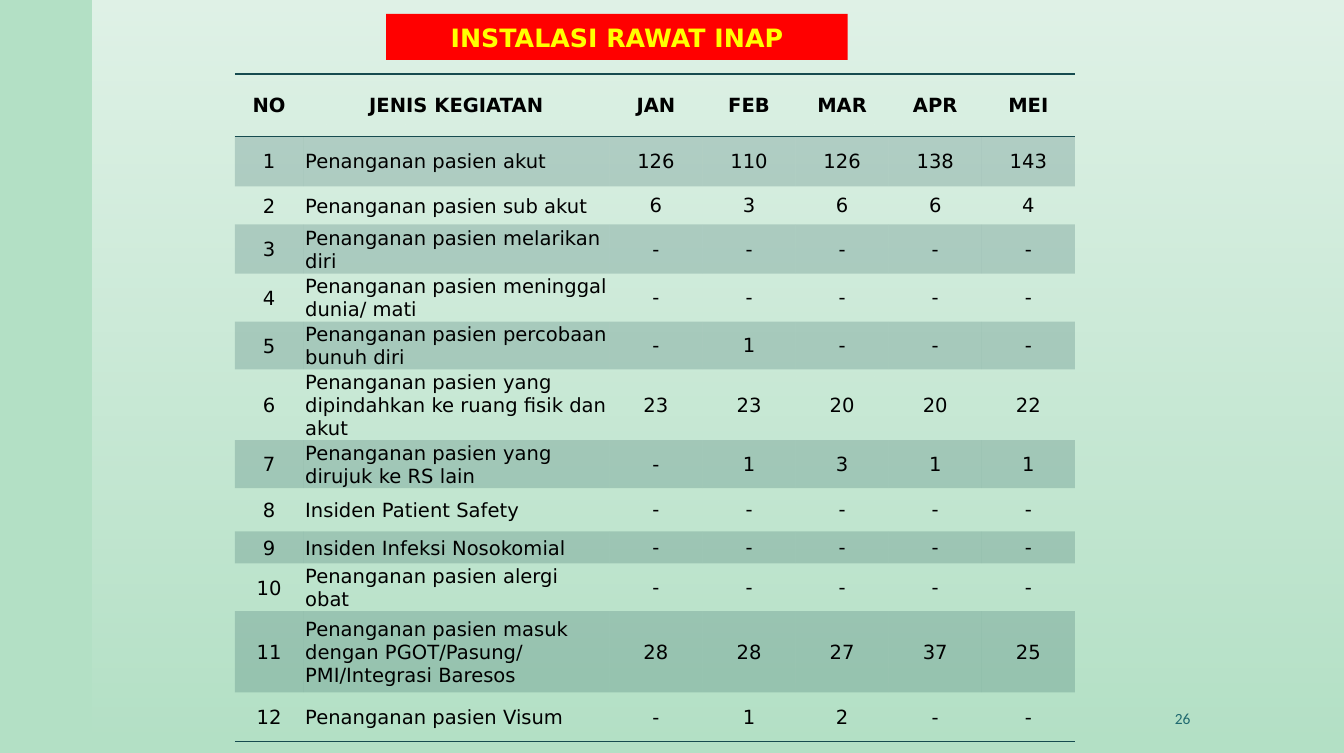
from lxml import etree
from pptx import Presentation
from pptx import util as u
from pptx.dml import color
from pptx.enum import shapes, text
from pptx.oxml import ns

INK, TEAL, MINT, WHITE = "000000", "164B4F", "B3E0C5", "FFFFFF"
NO_STYLE = "{2D5ABB26-0587-4C30-8999-92F81FD0307C}"
CENTER, LEFT, RIGHT = text.PP_ALIGN.CENTER, text.PP_ALIGN.LEFT, text.PP_ALIGN.RIGHT

HEADINGS = ["NO", "JENIS KEGIATAN", "JAN", "FEB", "MAR", "APR", "MEI"]
ACTIVITIES = [
    ("Penanganan pasien akut", "126 110 126 138 143", 36),
    ("Penanganan pasien sub akut", "6 3 6 6 4", 27.4),
    ("Penanganan pasien melarikan diri", "- - - - -", 35.3),
    ("Penanganan pasien meninggal dunia/ mati", "- - - - -", 27.4),
    ("Penanganan pasien percobaan bunuh diri", "- 1 - - -", 26.6),
    ("Penanganan pasien yang dipindahkan ke ruang fisik dan akut", "23 23 20 20 22", 39.6),
    ("Penanganan pasien yang dirujuk ke RS lain", "- 1 3 1 1", 26.6),
    ("Insiden Patient Safety", "- - - - -", 31),
    ("Insiden Infeksi Nosokomial", "- - - - -", 23),
    ("Penanganan pasien alergi obat", "- - - - -", 26.6),
    ("Penanganan pasien masuk dengan PGOT/Pasung/\vPMI/Integrasi Baresos", "28 28 27 37 25", 58.3),
    ("Penanganan pasien Visum", "- 1 2 - -", 35.3),
]


def rgb(code):
    return color.RGBColor.from_string(code)


def add_xml(parent, tag, **attributes):
    return etree.SubElement(parent, ns.qn(tag), attributes)


class WardSlide:
    """Builds the monthly ward report in one shared style."""

    def __init__(self, deck, font="DejaVu Sans", size=14):
        self.font, self.size = font, size
        self.slide = deck.slides.add_slide(deck.slide_layouts[5])
        backdrop = self.slide.background.fill
        backdrop.solid()
        backdrop.fore_color.rgb = rgb(MINT)

    def place(self, item, box):
        item.left, item.top, item.width, item.height = map(u.Pt, box)

    def fill_text(self, frame, words, align=CENTER, ink=INK, bold=False, size=None, font=None):
        frame.text = words
        frame.word_wrap = True
        for paragraph in frame.paragraphs:
            paragraph.alignment = align
            style = paragraph.font
            style.name, style.size = font or self.font, u.Pt(size or self.size)
            style.bold, style.color.rgb = bold, rgb(ink)

    def veil(self, box, opacities):
        sheen = self.slide.shapes.add_shape(shapes.MSO_SHAPE.RECTANGLE, *map(u.Pt, box))
        sheen.shadow.inherit = False
        sheen.line.fill.background()
        sheen.fill.gradient()
        sheen.fill.gradient_angle = 270
        for position, stop in enumerate(sheen.fill.gradient_stops):
            stop.position, stop.color.rgb = position, rgb(WHITE)
        tints = sheen._element.spPr.iter(ns.qn("a:srgbClr"))
        for tint, opacity in zip(tints, opacities):
            add_xml(tint, "a:alpha", val=str(opacity * 1000))
        self.slide.shapes._spTree.insert(2, sheen._element)

    def title(self, words, box, fill, ink):
        banner = self.slide.shapes.title
        self.place(banner, box)
        outline = add_xml(banner._element.spPr, "a:prstGeom", prst="roundRect")
        add_xml(outline, "a:avLst")
        banner.fill.solid()
        banner.fill.fore_color.rgb = rgb(fill)
        self.fill_text(banner.text_frame, words, ink=ink, bold=True, size=18.1)
        banner.text_frame.auto_size = text.MSO_AUTO_SIZE.NONE
        banner.text_frame.vertical_anchor = text.MSO_ANCHOR.MIDDLE

    def label(self, words, box, **style):
        frame = self.slide.shapes.add_textbox(*map(u.Pt, box)).text_frame
        self.fill_text(frame, words, **style)
        frame.vertical_anchor = text.MSO_ANCHOR.MIDDLE

    def rule(self, cell, side):
        edge = add_xml(cell._tc.get_or_add_tcPr(), side, w=str(u.Pt(1)))
        add_xml(add_xml(edge, "a:solidFill"), "a:srgbClr", val=TEAL)

    def cell(self, cell, words, row, column, last):
        header = row == 0
        align = LEFT if column == 1 and not header else CENTER
        self.fill_text(cell.text_frame, words, align, bold=header)
        cell.vertical_anchor = text.MSO_ANCHOR.MIDDLE
        inset = u.Pt(1.44 if header or column < 2 else 0.72)
        cell.margin_left = cell.margin_top = cell.margin_right = inset
        cell.margin_bottom = 0
        if header:
            self.rule(cell, "a:lnT")
        if header or row == last:
            self.rule(cell, "a:lnB")
        if row % 2:
            cell.fill.solid()
            cell.fill.fore_color.rgb = rgb(TEAL)
            tint = cell._tc.tcPr.find(ns.qn("a:solidFill"))[0]
            add_xml(tint, "a:alpha", val="20000")
        else:
            cell.fill.background()

    def table(self, rows, box, widths, heights):
        holder = self.slide.shapes.add_table(len(rows), len(widths), *map(u.Pt, box))
        grid = holder.table
        grid.horz_banding = False
        grid._tbl.tblPr.find(ns.qn("a:tableStyleId")).text = NO_STYLE
        for column, width in zip(grid.columns, widths):
            column.width = u.Pt(width)
        for row, height in zip(grid.rows, heights):
            row.height = u.Pt(height)
        for r, row in enumerate(rows):
            for c, words in enumerate(row):
                self.cell(grid.cell(r, c), words, r, c, len(rows) - 1)
        self.place(holder, box)


def main():
    deck = Presentation()
    deck.slide_width, deck.slide_height = u.Pt(964), u.Pt(540)
    ward = WardSlide(deck)
    ward.veil((66.2, 0, 897.8, 540), (60, 0))
    ward.title("INSTALASI RAWAT INAP", (277, 10, 331, 33), "FF0000", "FFFF00")
    rows = [HEADINGS]
    for number, (activity, months, _) in enumerate(ACTIVITIES, 1):
        rows.append([str(number), activity, *months.split()])
    heights = [44.6] + [height for _, _, height in ACTIVITIES]
    ward.table(rows, (168.5, 53, 602.6, 481.7), [49, 219.6] + [66.8] * 5, heights)
    ward.label("26", (636.5, 500.4, 224.6, 28.8), align=RIGHT, ink="1F696F",
               size=11.1, font="Calibri")
    deck.save("out.pptx")


if __name__ == "__main__":
    main()
